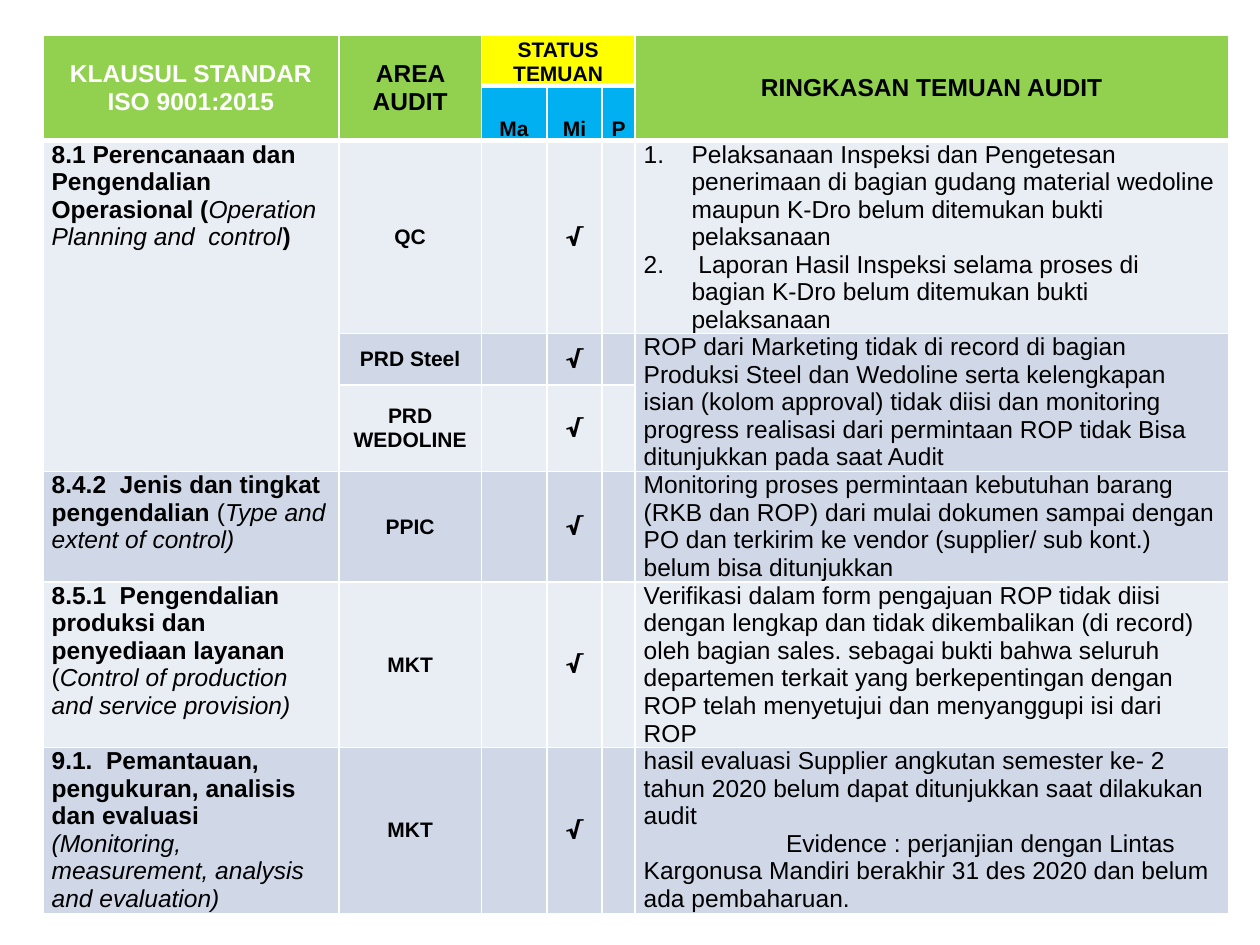
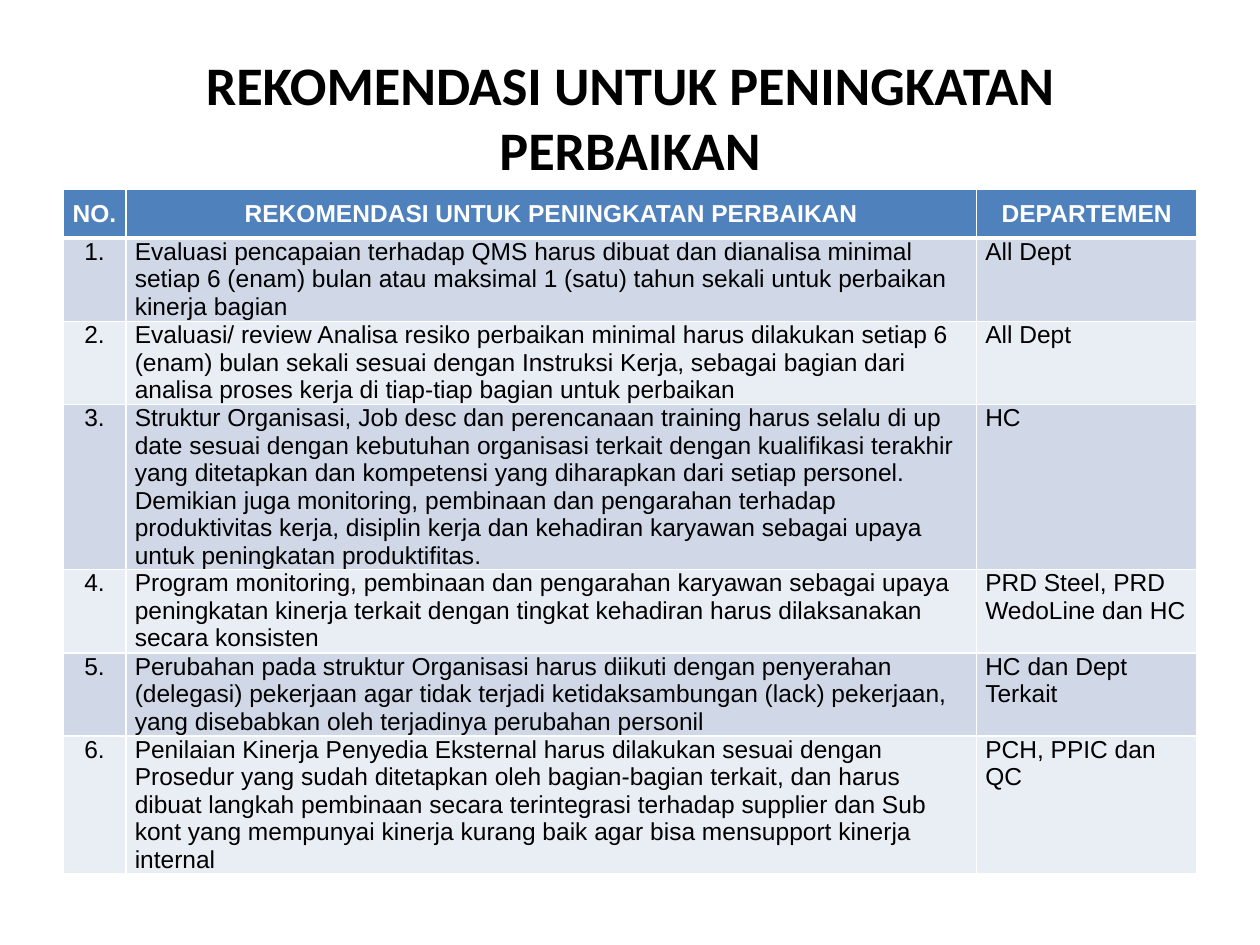
import pptx
import pptx.dml.color
import pptx.enum.text
import pptx.oxml.ns
import pptx.util
from lxml import etree

Inches = pptx.util.Inches
ALIGN = pptx.enum.text.PP_ALIGN
ANCHOR = pptx.enum.text.MSO_ANCHOR

COLORS = {
    "black": "000000", "white": "FFFFFF", "green": "92D050", "yellow": "FFFF00",
    "cyan": "00B0F0", "blue": "4F81BD", "light": "E9EDF4", "dark": "D0D8E8",
}
BODY = {"name": "Arial", "size": 14, "bold": False, "italic": False, "color": "black"}
BOLD = {"bold": True}
ITALIC = {"italic": True}
HEADING = {"bold": True, "color": "white"}
AREA = {"bold": True, "size": 12}
CHECK = {"bold": True, "name": "Cambria"}
CENTERED = {"alignment": ALIGN.CENTER}
MIDDLE = {"vertical_anchor": ANCHOR.MIDDLE}
BOTTOM = {"vertical_anchor": ANCHOR.BOTTOM}


def rgb(color):
    return pptx.dml.color.RGBColor.from_string(COLORS[color])


def set_values(target, values):
    for name, value in values.items():
        setattr(target, name, value)


class Deck:
    def __init__(self):
        self.presentation = pptx.Presentation()
        self.presentation.slide_width = Inches(10)
        self.presentation.slide_height = Inches(7.5)
        self.slide = None

    def add_slide(self, layout):
        self.slide = self.presentation.slides.add_slide(
            self.presentation.slide_layouts[layout])

    def add_text(self, paragraph, text, style):
        run = paragraph.add_run()
        run.text = text
        values = {**BODY, **style}
        run.font.color.rgb = rgb(values.pop("color"))
        values["size"] = pptx.util.Pt(values["size"])
        set_values(run.font, values)

    def title(self, text, left, top, width, height):
        shape = self.slide.shapes.title
        set_values(shape, {"left": Inches(left), "top": Inches(top),
                           "width": Inches(width), "height": Inches(height)})
        frame = shape.text_frame
        set_values(frame, {"word_wrap": True, **MIDDLE})
        paragraph = frame.paragraphs[0]
        set_values(paragraph, CENTERED)
        self.add_text(paragraph, text, {"name": "Calibri", "size": 31, "bold": True})

    def table(self, left, top, columns, rows, header_rows, bands):
        """Add a table with white borders, thicker below the header, and banded rows."""
        table = self.slide.shapes.add_table(
            len(rows), len(columns), Inches(left), Inches(top),
            Inches(sum(columns)), Inches(sum(rows))).table
        for column, width in zip(table.columns, columns):
            column.width = Inches(width)
        for index, (row, height) in enumerate(zip(table.rows, rows)):
            row.height = Inches(height)
            for cell in row.cells:
                self.borders(cell, 3 if index < header_rows else 1)
                self.fill(cell, bands[(index - header_rows) % 2])
                set_values(cell, {"margin_left": Inches(0.07), "margin_right": Inches(0.07),
                                  "margin_top": 0, "margin_bottom": 0})
        return table

    def borders(self, cell, bottom):
        properties = cell._tc.get_or_add_tcPr()
        for side, points in (("L", 1), ("R", 1), ("T", 1), ("B", bottom)):
            line = etree.SubElement(properties, pptx.oxml.ns.qn(f"a:ln{side}"),
                                    w=str(pptx.util.Pt(points)))
            solid = etree.SubElement(line, pptx.oxml.ns.qn("a:solidFill"))
            etree.SubElement(solid, pptx.oxml.ns.qn("a:srgbClr"), val=COLORS["white"])

    def fill(self, cell, color):
        cell.fill.solid()
        cell.fill.fore_color.rgb = rgb(color)

    def cell_text(self, cell, content, style=None, paragraph_format=None, anchor=None):
        """Fill a cell with a string, or a list of paragraphs of (text, style) runs."""
        if isinstance(content, str):
            content = [[(content, style or {})]]
        frame = cell.text_frame
        for index, runs in enumerate(content):
            paragraph = frame.add_paragraph() if index else frame.paragraphs[0]
            set_values(paragraph, paragraph_format or {})
            for text, run_style in runs:
                self.add_text(paragraph, text, run_style)
        set_values(cell, anchor or {})

    def indent(self, paragraph, margin, first_line, numbered=False):
        properties = paragraph._p.get_or_add_pPr()
        properties.set("marL", str(Inches(margin)))
        properties.set("indent", str(Inches(first_line)))
        if numbered:
            etree.SubElement(properties, pptx.oxml.ns.qn("a:buFont"), typeface="+mj-lt")
            etree.SubElement(properties, pptx.oxml.ns.qn("a:buAutoNum"),
                             type="arabicPeriod")


# first row, last row, text
CLAUSES = [
    (2, 4, [[("8.1 Perencanaan dan Pengendalian Operasional (", BOLD),
             ("Operation Planning and  control", ITALIC), (")", BOLD)]]),
    (5, 5, [[("8.4.2  Jenis dan tingkat pengendalian ", BOLD), ("(", {}),
             ("Type and extent of control)", ITALIC)]]),
    (6, 6, [[("8.5.1  Pengendalian produksi dan penyediaan layanan", BOLD)],
            [("(", {}), ("Control of production and service provision)", ITALIC)]]),
    (7, 7, [[("9.1.  Pemantauan, pengukuran, analisis dan evaluasi", BOLD)],
            [("(Monitoring, measurement, analysis and evaluation)", ITALIC)]]),
]
AREAS = ["QC", "PRD Steel", "PRD WEDOLINE", "PPIC", "MKT", "MKT"]
FINDINGS = [
    (2, 2, [[("Pelaksanaan Inspeksi dan Pengetesan penerimaan di bagian gudang material "
              "wedoline maupun K-Dro belum ditemukan bukti pelaksanaan", {})],
            [(" Laporan Hasil Inspeksi selama proses di bagian K-Dro belum ditemukan "
              "bukti pelaksanaan", {})]]),
    (3, 4, "ROP dari Marketing tidak di record di bagian Produksi Steel dan Wedoline serta "
           "kelengkapan isian (kolom approval) tidak diisi dan monitoring progress realisasi "
           "dari permintaan ROP tidak Bisa ditunjukkan pada saat Audit"),
    (5, 5, "Monitoring proses permintaan kebutuhan barang (RKB dan ROP) dari mulai dokumen "
           "sampai dengan PO dan terkirim ke vendor (supplier/ sub kont.) belum bisa "
           "ditunjukkan"),
    (6, 6, "Verifikasi dalam form pengajuan ROP tidak diisi dengan lengkap dan tidak "
           "dikembalikan (di record) oleh bagian sales. sebagai bukti bahwa seluruh "
           "departemen terkait yang berkepentingan dengan ROP telah menyetujui dan "
           "menyanggupi isi dari ROP"),
    (7, 7, [[("hasil evaluasi Supplier angkutan semester ke- 2 tahun 2020 belum dapat "
              "ditunjukkan saat dilakukan audit", {})],
            [("Evidence : perjanjian dengan Lintas Kargonusa Mandiri berakhir 31 des 2020 "
              "dan belum ada pembaharuan.", {})]]),
]
RECOMMENDATIONS = [
    ("Evaluasi pencapaian terhadap QMS harus dibuat dan dianalisa minimal setiap 6 (enam) "
     "bulan atau maksimal 1 (satu) tahun sekali untuk perbaikan kinerja bagian", "All Dept"),
    ("Evaluasi/ review Analisa resiko perbaikan minimal harus dilakukan setiap 6 (enam) bulan "
     "sekali sesuai dengan Instruksi Kerja, sebagai bagian dari analisa proses kerja di "
     "tiap-tiap bagian untuk perbaikan", "All Dept"),
    ("Struktur Organisasi, Job desc dan perencanaan training harus selalu di up date sesuai "
     "dengan kebutuhan organisasi terkait dengan kualifikasi terakhir yang ditetapkan dan "
     "kompetensi yang diharapkan dari setiap personel. Demikian juga monitoring, pembinaan "
     "dan pengarahan terhadap produktivitas kerja, disiplin kerja dan kehadiran karyawan "
     "sebagai upaya untuk peningkatan produktifitas.", "HC"),
    ("Program monitoring, pembinaan dan pengarahan karyawan sebagai upaya peningkatan kinerja "
     "terkait dengan tingkat kehadiran harus dilaksanakan secara konsisten",
     "PRD Steel, PRD WedoLine dan HC"),
    ("Perubahan pada struktur Organisasi harus diikuti dengan penyerahan (delegasi) pekerjaan "
     "agar tidak terjadi ketidaksambungan (lack) pekerjaan, yang disebabkan oleh terjadinya "
     "perubahan personil", "HC dan Dept Terkait"),
    ("Penilaian Kinerja Penyedia Eksternal harus dilakukan sesuai dengan Prosedur yang sudah "
     "ditetapkan oleh bagian-bagian terkait, dan harus dibuat langkah pembinaan secara "
     "terintegrasi terhadap supplier dan Sub kont yang mempunyai kinerja kurang baik agar "
     "bisa mensupport kinerja internal", "PCH, PPIC dan QC"),
]


def build_findings(deck):
    deck.add_slide(6)
    table = deck.table(0.34, 0.28, [2.35, 1.13, 0.52, 0.44, 0.26, 4.71],
                       [0.4, 0.43, 1.53, 0.41, 0.68, 0.88, 1.31, 1.32],
                       header_rows=2, bands=("light", "dark"))
    headers = [
        (0, 0, 1, 0, "KLAUSUL STANDAR ISO 9001:2015", "green", HEADING, MIDDLE),
        (0, 1, 1, 1, "AREA AUDIT", "green", BOLD, MIDDLE),
        (0, 2, 0, 4, "STATUS TEMUAN", "yellow", AREA, BOTTOM),
        (0, 5, 1, 5, "RINGKASAN TEMUAN AUDIT", "green", BOLD, MIDDLE),
    ]
    headers += [(1, column, 1, column, text, "cyan", AREA, BOTTOM)
                for column, text in enumerate(["Ma", "Mi", "P"], 2)]
    for top, left, bottom, right, text, color, style, anchor in headers:
        cell = table.cell(top, left)
        if (top, left) != (bottom, right):
            cell.merge(table.cell(bottom, right))
        deck.fill(cell, color)
        deck.cell_text(cell, text, style, CENTERED, anchor)

    for column, entries in ((0, CLAUSES), (5, FINDINGS)):
        for first, last, content in entries:
            cell = table.cell(first, column)
            if last > first:
                cell.merge(table.cell(last, column))
            deck.cell_text(cell, content)
    for row, area in enumerate(AREAS, 2):
        deck.cell_text(table.cell(row, 1), area, AREA, CENTERED, MIDDLE)
        deck.cell_text(table.cell(row, 3), "√", CHECK, CENTERED, MIDDLE)

    for paragraph in table.cell(2, 5).text_frame.paragraphs:
        deck.indent(paragraph, 0.38, -0.38, numbered=True)
    deck.indent(table.cell(7, 5).text_frame.paragraphs[1], 0, 1.13)


def build_recommendations(deck):
    heading = "REKOMENDASI UNTUK PENINGKATAN PERBAIKAN"
    deck.add_slide(5)
    deck.title(heading, 0.5, 0.3, 9, 1.25)
    table = deck.table(0.5, 1.5, [0.5, 6.75, 1.75],
                       [0.39, 0.66, 0.66, 1.31, 0.66, 0.66, 1.09],
                       header_rows=1, bands=("dark", "light"))
    for column, text in enumerate(["NO.", heading, "DEPARTEMEN"]):
        deck.fill(table.cell(0, column), "blue")
        deck.cell_text(table.cell(0, column), text, HEADING, CENTERED, MIDDLE)
    for row, (recommendation, department) in enumerate(RECOMMENDATIONS, 1):
        deck.cell_text(table.cell(row, 0), f"{row}.", paragraph_format=CENTERED)
        deck.cell_text(table.cell(row, 1), recommendation)
        deck.cell_text(table.cell(row, 2), department)


def main():
    deck = Deck()
    build_findings(deck)
    build_recommendations(deck)
    deck.presentation.save("out.pptx")


if __name__ == "__main__":
    main()
